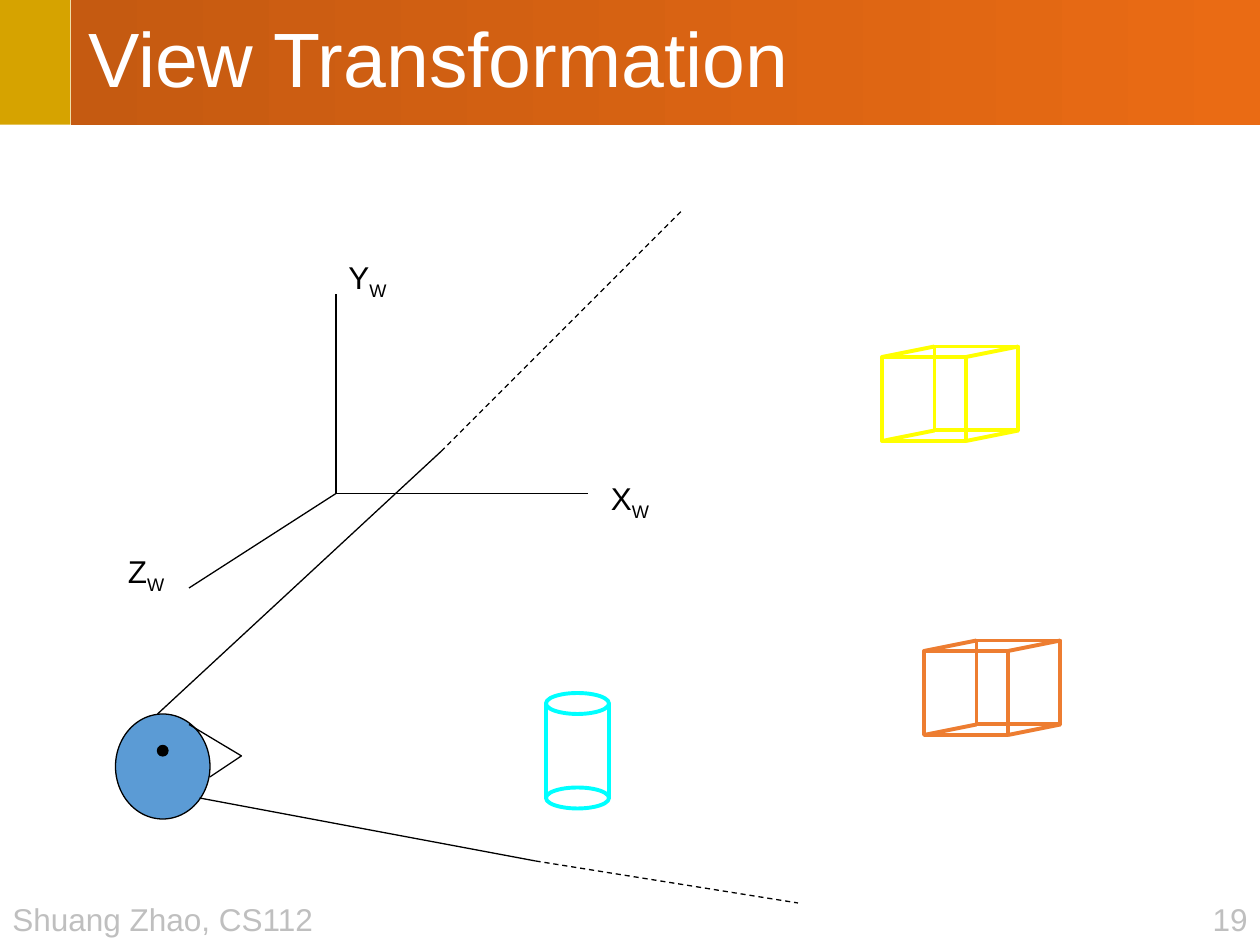
from pptx import Presentation
from pptx.dml.color import RGBColor
from pptx.enum.dml import MSO_LINE
from pptx.enum.shapes import MSO_CONNECTOR, MSO_SHAPE as SHAPE
from pptx.enum.text import MSO_ANCHOR as ANCHOR, MSO_AUTO_SIZE as AUTO, PP_ALIGN as ALIGN
from pptx.oxml.ns import qn
from pptx.util import Pt
from lxml.etree import SubElement

BLACK, WHITE, GRAY = "000000", "FFFFFF", "BFBFBF"
GOLD, ORANGE, YELLOW, CYAN, BLUE = "D6A300", "ED7D31", "FFFF00", "00FFFF", "5B9BD5"
BAR_START, BAR_END = "C55A11", "EA6B14"
THIN, THICK = 0.75, 2.25


def color(value):
    return RGBColor.from_string(value)


class Canvas:
    """Holds the text style and the current slide; all lengths are in points."""

    font_name = "Arial"

    def __init__(self, page):
        self.shapes = page.shapes

    def style_font(self, font, size, ink):
        font.name = self.font_name
        font.size = Pt(size)
        font.color.rgb = color(ink)

    def paint(self, shape, fill=None, ink=None, weight=THIN):
        shape.shadow.inherit = False
        if fill:
            shape.fill.solid()
            shape.fill.fore_color.rgb = color(fill)
        else:
            shape.fill.background()
        if ink:
            shape.line.color.rgb = color(ink)
            shape.line.width = Pt(weight)
        else:
            shape.line.fill.background()

    def title(self, text, left, top, width, height):
        box = self.shapes.title
        box.left, box.top, box.width, box.height = map(Pt, (left, top, width, height))
        box.fill.gradient()
        box.fill.gradient_angle = 0
        for stop, shade in zip(box.fill.gradient_stops, (BAR_START, BAR_END)):
            stop.color.rgb = color(shade)
        frame = box.text_frame
        frame.text = text
        frame.auto_size = AUTO.NONE
        frame.vertical_anchor = ANCHOR.MIDDLE
        frame.margin_left = Pt(10)
        para = frame.paragraphs[0]
        para.alignment = ALIGN.LEFT
        para.line_spacing = 0.9
        self.style_font(para.runs[0].font, 44, WHITE)

    def text(self, text, left, top, width, ink=BLACK, align=ALIGN.LEFT, subscript=None):
        box = self.shapes.add_textbox(Pt(left), Pt(top), Pt(width), Pt(29))
        frame = box.text_frame
        frame.word_wrap = False
        frame.text = text
        para = frame.paragraphs[0]
        para.alignment = align
        if subscript:
            span = para.add_run()
            span.text = subscript
            span.font._element.set("baseline", "-25000")
        for span in para.runs:
            self.style_font(span.font, 18, ink)

    def shape(self, kind, left, top, width, height, **style):
        shape = self.shapes.add_shape(kind, Pt(left), Pt(top), Pt(width), Pt(height))
        self.paint(shape, **style)

    def line(self, start, end, ink=BLACK, weight=THIN, dashed=False):
        line = self.shapes.add_connector(
            MSO_CONNECTOR.STRAIGHT, *map(Pt, (*start, *end)))
        line.line.color.rgb = color(ink)
        line.line.width = Pt(weight)
        if dashed:
            line.line.dash_style = MSO_LINE.DASH
        SubElement(line._element.spPr, qn("a:effectLst"))

    def open_path(self, *points):
        start, *rest = [(Pt(x), Pt(y)) for x, y in points]
        builder = self.shapes.build_freeform(*start)
        builder.add_line_segments(rest, close=False)
        self.paint(builder.convert_to_shape(), ink=BLACK)

    def cube(self, left, top, ink, side=48, shift_x=30, shift_y=-6):
        """Two square faces joined at their four corners."""
        for x, y in ((left, top), (left + shift_x, top + shift_y)):
            self.shape(SHAPE.RECTANGLE, x, y, side, side, ink=ink, weight=THICK)
        for x in (left, left + side):
            for y in (top, top + side):
                self.line((x, y), (x + shift_x, y + shift_y), ink, THICK)

    def cylinder(self, left, top, ink, width=36, height=54, rim=12):
        for y in (top, top + height):
            self.shape(SHAPE.OVAL, left, y, width, rim, ink=ink, weight=THICK)
        middle = top + rim / 2
        for x in (left, left + width):
            self.line((x, middle), (x, middle + height), ink, THICK)

    def axes(self, origin, axes):
        for name, end, (left, top) in axes:
            self.line(origin, end)
            self.text(name, left, top, 38, subscript="W")

    def sight_line(self, start, bend, end):
        self.line(start, bend)
        self.line(bend, end, dashed=True)


def main():
    deck = Presentation()
    deck.slide_width, deck.slide_height = Pt(720), Pt(540)
    canvas = Canvas(deck.slides.add_slide(deck.slide_layouts[5]))

    canvas.shape(SHAPE.RECTANGLE, 0, 0, 40.3, 71.3, fill=GOLD)
    canvas.title("View Transformation", 40.3, 0, 679.7, 71.3)
    canvas.text("19", 683, 511, 37, GRAY, ALIGN.RIGHT)
    canvas.text("Shuang Zhao, CS112", 0, 511, 188, GRAY)

    canvas.cube(528, 372, ORANGE)
    canvas.axes((192, 282), [
        ("X", (336, 282), (342, 270)),
        ("Y", (192, 168), (192, 144)),
        ("Z", (108, 336), (66, 312)),
    ])
    canvas.cube(504, 204, YELLOW)
    canvas.cylinder(312, 396, CYAN)

    canvas.shape(SHAPE.OVAL, 66, 408, 54, 60, fill=BLUE, ink=BLACK)
    canvas.open_path((108, 414), (138, 432), (120, 444))
    canvas.shape(SHAPE.OVAL, 90, 426, 6, 6, fill=BLACK, ink=BLACK)
    canvas.sight_line((90, 408), (252, 258), (390, 120))
    canvas.sight_line((114, 456), (306, 492), (456, 516))

    deck.save("out.pptx")


if __name__ == "__main__":
    main()
